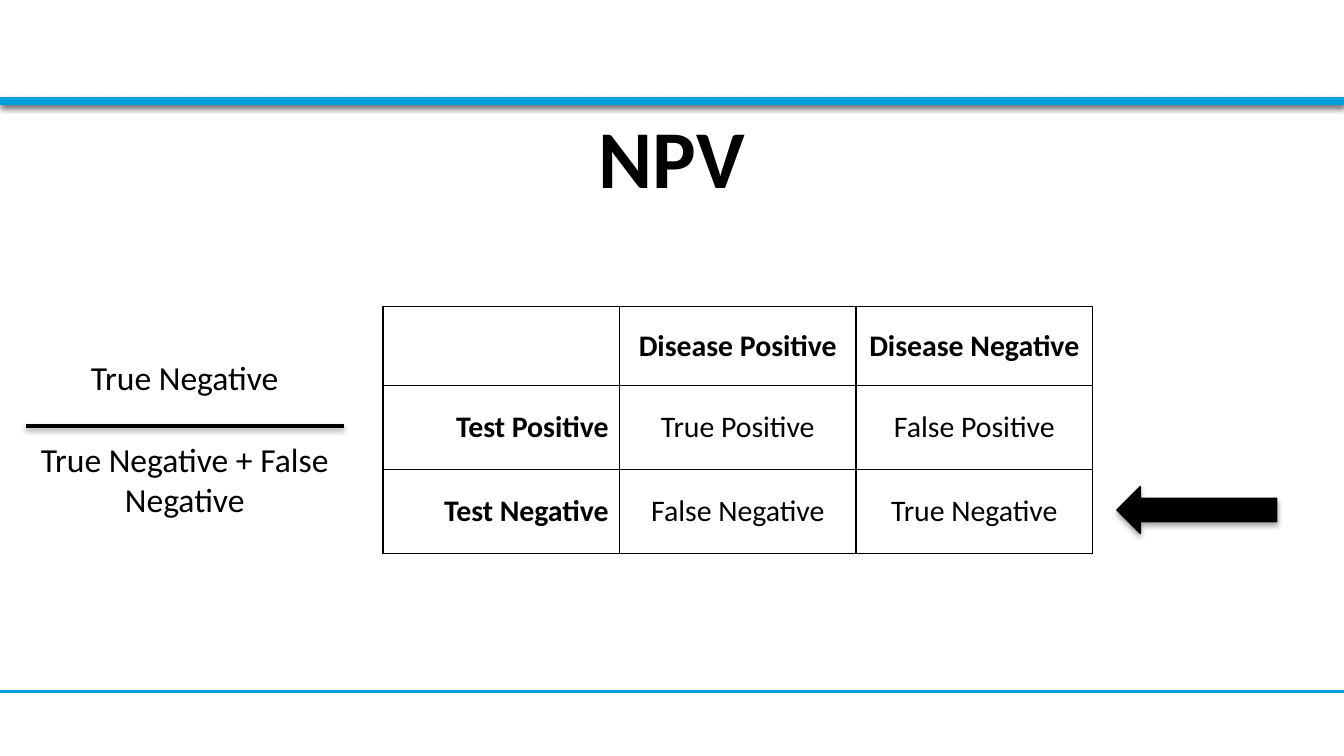
import pptx
import pptx.util
import pptx.dml.color
import pptx.enum.shapes
import pptx.enum.text
import pptx.oxml
import pptx.oxml.ns

Inches = pptx.util.Inches
Pt = pptx.util.Pt
RGB = pptx.dml.color.RGBColor
ALIGN = pptx.enum.text.PP_ALIGN
MIDDLE = pptx.enum.text.MSO_ANCHOR.MIDDLE
SHAPE = pptx.enum.shapes.MSO_SHAPE
STRAIGHT = pptx.enum.shapes.MSO_CONNECTOR.STRAIGHT

BLACK = RGB(0, 0, 0)
WHITE = RGB(255, 255, 255)
BLUE = RGB(0x00, 0xA0, 0xDF)
FONT = "Calibri"
NS = pptx.oxml.ns.nsdecls("a")

WIDE = 10
HIGH = WIDE * 9 / 16
ROWS = [
    ["", "Disease Positive", "Disease Negative"],
    ["Test Positive", "True Positive", "False Positive"],
    ["Test Negative", "False Negative", "True Negative"],
]


def style(para, size, bold=False, align=ALIGN.CENTER):
    para.alignment = align
    for run in para.runs:
        font = run.font
        font.name, font.size, font.bold = FONT, Pt(size), bold
        font.color.rgb = BLACK


def shade(shape, alpha, dist):
    shape._element.spPr.append(pptx.oxml.parse_xml(
        f'<a:effectLst {NS}><a:outerShdw blurRad="{Pt(3.1)}" dist="{Pt(dist)}" '
        f'dir="5400000" rotWithShape="0"><a:srgbClr val="{BLACK}">'
        f'<a:alpha val="{alpha * 1000}"/></a:srgbClr></a:outerShdw></a:effectLst>'))


def add_rule(slide, left, top, width, color, weight, alpha=0):
    rule = slide.shapes.add_connector(
        STRAIGHT, Inches(left), Inches(top), Inches(left + width), Inches(top))
    rule.line.color.rgb = color
    rule.line.width = Pt(weight)
    if alpha:
        shade(rule, alpha, 1.6)
    else:
        rule._element.spPr.append(pptx.oxml.parse_xml(f"<a:effectLst {NS}/>"))


def add_solid(slide, kind, left, top, width, height, color, edge=None):
    solid = slide.shapes.add_shape(
        kind, Inches(left), Inches(top), Inches(width), Inches(height))
    solid.fill.solid()
    solid.fill.fore_color.rgb = color
    if edge:
        solid.line.color.rgb = color
        solid.line.width = Pt(edge)
    else:
        solid.line.fill.background()
    shade(solid, 35, 1.8)


def add_frame(slide, left, top, width, height):
    add_solid(slide, SHAPE.RECTANGLE, left, top, width, 0.77, WHITE)
    add_rule(slide, left, top + height - 0.48, width, BLUE, 2)
    add_rule(slide, left, top + 0.75, width, BLUE, 4.5, 38)


def add_title(slide, left, top, width, height):
    title = slide.shapes.title
    title.left, title.top = Inches(left), Inches(top)
    title.width, title.height = Inches(width), Inches(height)
    title.text_frame.text = "NPV"
    title.text_frame.vertical_anchor = MIDDLE
    style(title.text_frame.paragraphs[0], 44, True)


def add_edges(cell):
    props = cell._tc.get_or_add_tcPr()
    for side in ("lnL", "lnR", "lnT", "lnB"):
        props.append(pptx.oxml.parse_xml(
            f'<a:{side} {NS} w="{Pt(1)}"><a:solidFill>'
            f'<a:srgbClr val="{BLACK}"/></a:solidFill></a:{side}>'))


def add_grid(slide, left, top, width, height):
    count = len(ROWS)
    table = slide.shapes.add_table(
        count, count, Inches(left), Inches(top), Inches(width), Inches(height)).table
    table.first_row = table.horz_banding = False
    head = 0.59
    for i, texts in enumerate(ROWS):
        table.columns[i].width = Inches(width / count)
        table.rows[i].height = Inches((height - head) / (count - 1) if i else head)
        for j, text in enumerate(texts):
            cell = table.cell(i, j)
            add_edges(cell)
            cell.fill.background()
            cell.vertical_anchor = MIDDLE
            cell.margin_left = cell.margin_right = Inches(0.08)
            cell.margin_top = cell.margin_bottom = Inches(0.04)
            cell.text_frame.text = text
            style(cell.text_frame.paragraphs[0], 16, i == 0 or j == 0,
                  ALIGN.CENTER if j else ALIGN.RIGHT)


def add_ratio(slide, left, top, width, height):
    box = slide.shapes.add_textbox(
        Inches(left), Inches(top), Inches(width), Inches(height))
    frame = box.text_frame
    frame.word_wrap = True
    frame.text = "True Negative\nTrue Negative + False Negative"
    for para in frame.paragraphs:
        style(para, 18)
    frame.paragraphs[1].space_before = Pt(22)
    add_rule(slide, left, top + 0.56, width, BLACK, 2, 38)


def main():
    deck = pptx.Presentation()
    deck.slide_width, deck.slide_height = Inches(WIDE), Inches(HIGH)
    slide = deck.slides.add_slide(deck.slide_layouts[5])
    add_frame(slide, 0, 0, WIDE, HIGH)
    add_title(slide, 0.5, 0.69, 9, 0.94)
    add_grid(slide, 2.85, 2.28, 5.28, 1.84)
    add_solid(slide, SHAPE.LEFT_ARROW, 8.31, 3.62, 1.19, 0.35, BLACK, 0.75)
    add_ratio(slide, 0.19, 2.61, 2.37, 1.31)
    deck.save("out.pptx")


if __name__ == "__main__":
    main()
